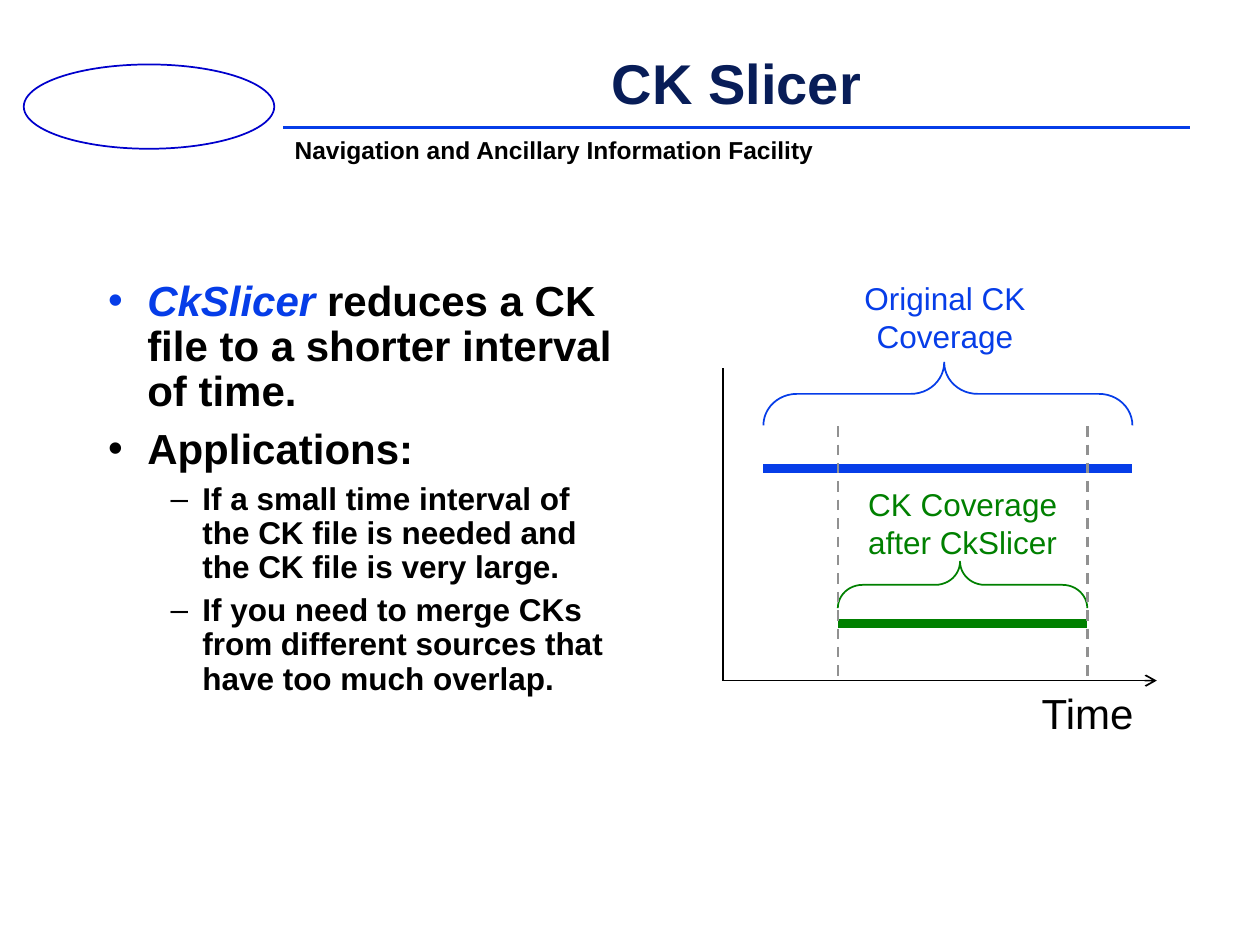
from lxml import etree
from pptx import Presentation
from pptx import util as u
from pptx.dml.color import RGBColor
from pptx.enum import dml, shapes, text
from pptx.oxml.ns import qn

BLUE = RGBColor(0x06, 0x3D, 0xE8)
NAVY = RGBColor(0x08, 0x1D, 0x58)
RING = RGBColor(0x00, 0x00, 0xCC)
GREEN = RGBColor(0x00, 0x80, 0x00)
GRAY = RGBColor(0x91, 0x91, 0x91)
BLACK = RGBColor(0x00, 0x00, 0x00)
FONT = "Arial"


def add_run(para, words, size, color, bold=False, slant=False):
    """Append one styled run to a paragraph."""
    run = para.add_run()
    run.text = words
    font = run.font
    font.name, font.size = FONT, u.Pt(size)
    font.bold, font.italic = bold, slant
    font.color.rgb = color


def set_frame(frame, pad, wrap=True):
    """Set the insets, in cm, and the wrapping of a text frame."""
    frame.margin_left = frame.margin_right = u.Cm(pad[0])
    frame.margin_top = frame.margin_bottom = u.Cm(pad[1])
    frame.word_wrap = wrap
    frame.auto_size = text.MSO_AUTO_SIZE.NONE


def add_text(slide, box, pad=(0.25, 0.13), wrap=True):
    """Add a text box and return its frame."""
    frame = slide.shapes.add_textbox(*map(u.Cm, box)).text_frame
    set_frame(frame, pad, wrap)
    return frame


def add_line(slide, start, end, color, width, dash=False, arrow=False):
    """Draw a straight line between two points in cm."""
    line = slide.shapes.add_connector(
        shapes.MSO_CONNECTOR.STRAIGHT, *map(u.Cm, (*start, *end)))
    line.line.color.rgb = color
    line.line.width = u.Pt(width)
    if dash:
        line.line.dash_style = dml.MSO_LINE.DASH
    if arrow:
        etree.SubElement(line.line._get_or_add_ln(), qn("a:tailEnd"), type="arrow")
    etree.SubElement(line._element.spPr, qn("a:effectLst"))


def add_outline(slide, kind, box, color):
    """Add an unfilled preset shape with a thin line."""
    shape = slide.shapes.add_shape(kind, *map(u.Cm, box))
    shape.shadow.inherit = False
    shape.fill.background()
    shape.line.color.rgb = color
    shape.line.width = u.Pt(1)
    return shape


def add_header(slide, box):
    """Place the emblem, title, rule and facility name."""
    left, top, width, height = box
    add_outline(slide, shapes.MSO_SHAPE.OVAL, (left, top + 0.23, 5.05, 1.7), RING)
    rule = top + 1.5
    add_line(slide, (left + 5.23, rule), (left + width, rule), BLUE, 1.5)
    title = slide.shapes.title
    title.left, title.top = u.Cm(left + 11.64), u.Cm(top)
    title.width, title.height = u.Cm(5.46), u.Cm(1.37)
    pad = (0.18, 0.08)
    frame = title.text_frame
    set_frame(frame, pad, False)
    frame.vertical_anchor = text.MSO_ANCHOR.MIDDLE
    para = frame.paragraphs[0]
    para.alignment = text.PP_ALIGN.CENTER
    para.line_spacing = 0.87
    add_run(para, "CK Slicer", 32, NAVY, True)
    name = add_text(slide, (left + 5.28, top + 1.63, 10.9, height - 1.63), pad, False)
    para = name.paragraphs[0]
    para.line_spacing = 0.9
    add_run(para, "Navigation and Ancillary Information Facility", 14, BLACK, True)


def add_points(slide, box):
    """Place the bulleted list."""
    levels = (("•", 24, 0.79, 0.79), ("–", 18, 1.9, 0.64))
    items = (
        (0, (("CkSlicer ", BLUE, True),
             ("reduces a CK file to a shorter interval of time.", BLACK, False))),
        (0, (("Applications:", BLACK, False),)),
        (1, (("If a small time interval of the CK file is needed "
              "and the CK file is very large.", BLACK, False),)),
        (1, (("If you need to merge CKs from different sources "
              "that have too much overlap.", BLACK, False),)),
    )
    frame = add_text(slide, box)
    for index, (level, runs) in enumerate(items):
        para = frame.add_paragraph() if index else frame.paragraphs[0]
        mark, size, margin, hang = levels[level]
        props = para._p.get_or_add_pPr()
        props.set("marL", str(u.Cm(margin)))
        props.set("indent", str(-u.Cm(hang)))
        etree.SubElement(props, qn("a:buFont"), typeface=FONT)
        etree.SubElement(props, qn("a:buChar"), char=mark)
        para.level = level
        para.line_spacing = 0.9
        para.space_before = u.Pt(0.3 * size if index else 0)
        for words, color, slant in runs:
            add_run(para, words, size, color, True, slant)


def add_brace(slide, start, end, mid, depth, color):
    """Draw an upward brace over a span, centred on height mid."""
    span = end - start
    box = ((start + end - depth) / 2, mid - span / 2, depth, span)
    brace = add_outline(slide, shapes.MSO_SHAPE.RIGHT_BRACE, box, color)
    brace.adjustments[0], brace.adjustments[1] = 0.53, 0.49
    brace.rotation = 270


def add_plot(slide, box):
    """Draw the coverage bars over a time axis."""
    left, top, width, height = box
    base = top + height - 1.27
    add_line(slide, (left, base), (left + width, base), BLACK, 1, arrow=True)
    add_line(slide, (left, base), (left, top + 1.93), BLACK, 1)
    full = left + 0.81, left + 8.25
    cut = left + 2.31, left + 7.34
    bars = ((full, 3.96, 2.45, 1.27, BLUE), (cut, 7.08, 6.3, 0.94, GREEN))
    for (start, end), bar, mid, depth, color in bars:
        add_line(slide, (start, top + bar), (end, top + bar), color, 5)
        add_brace(slide, start, end, top + mid, depth, color)
    for edge in cut:
        add_line(slide, (edge, top + 3.1), (edge, base), GRAY, 1.5, dash=True)
    center, start = text.PP_ALIGN.CENTER, text.PP_ALIGN.LEFT
    labels = (
        ("Original CK Coverage", (2.49, 0, 3.96, 1.8), 18, BLUE, center),
        ("CK Coverage after CkSlicer", (2.31, 4.16, 5.03, 1.8), 18, GREEN, center),
        ("Time", (6.17, height - 1.27, 2.39, 1.27), 24, BLACK, start),
    )
    for words, (x, y, wide, high), size, color, align in labels:
        frame = add_text(slide, (left + x, top + y, wide, high), wrap=align == center)
        para = frame.paragraphs[0]
        para.alignment = align
        add_run(para, words, size, color)


def main():
    """Build and save the deck."""
    deck = Presentation()
    deck.slide_width, deck.slide_height = u.Cm(25.4), u.Cm(19.05)
    slide = deck.slides.add_slide(deck.slide_layouts[5])
    add_header(slide, (0.48, 1.07, 23.5, 2.32))
    add_points(slide, (1.93, 5.51, 10.92, 11.4))
    add_plot(slide, (14.58, 5.49, 8.74, 9.5))
    deck.save("out.pptx")


if __name__ == "__main__":
    main()
